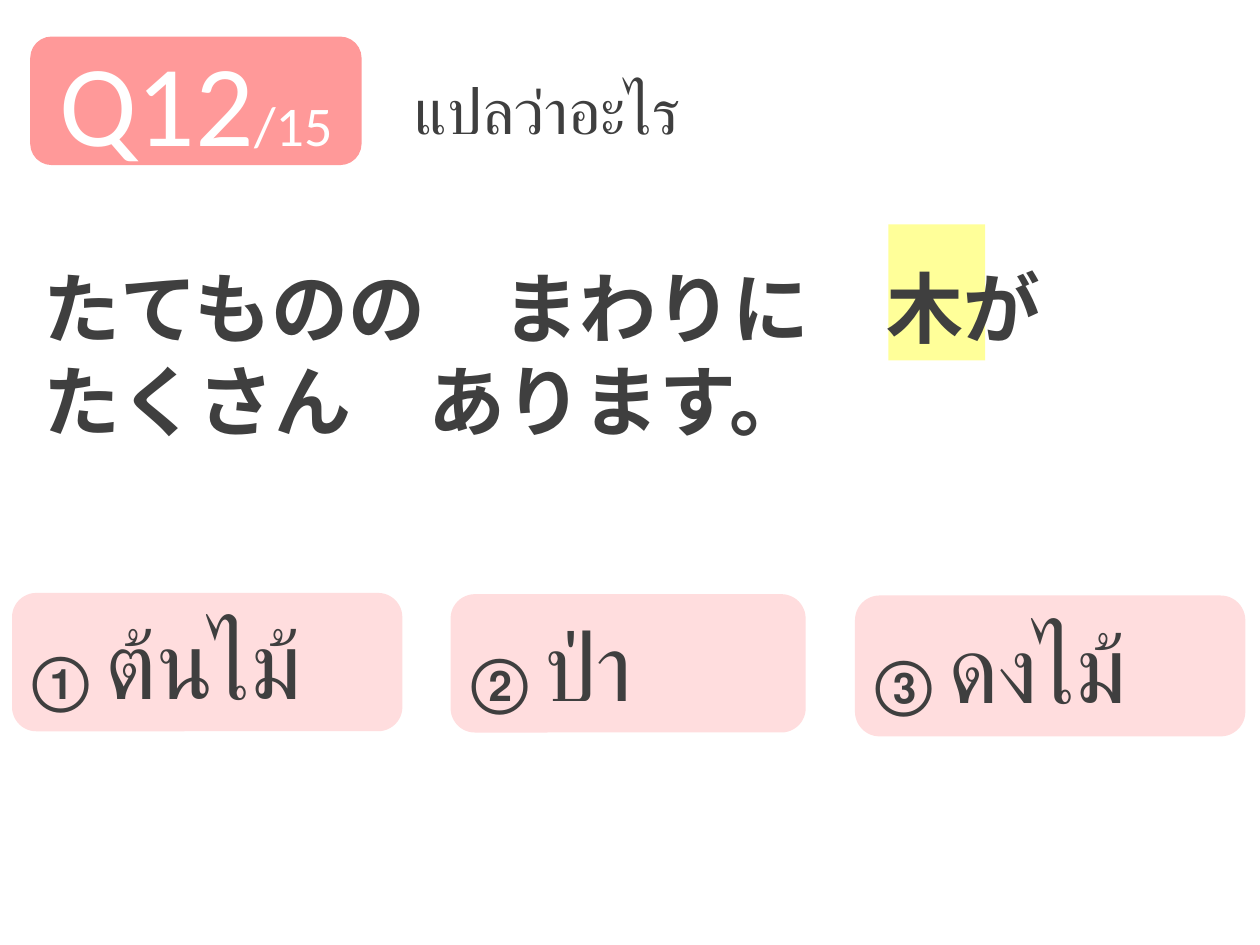
import pptx
import pptx.dml.color
import pptx.enum.shapes
import pptx.enum.text
import pptx.util

RGBColor = pptx.dml.color.RGBColor
SHAPE = pptx.enum.shapes.MSO_SHAPE
ALIGN = pptx.enum.text.PP_ALIGN
ANCHOR = pptx.enum.text.MSO_ANCHOR

INK = RGBColor(0x3F, 0x3F, 0x3F)
WHITE = RGBColor(0xFF, 0xFF, 0xFF)
CORAL = RGBColor(0xFF, 0x99, 0x99)
BLUSH = RGBColor(0xFF, 0xDD, 0xDE)
YELLOW = RGBColor(0xFF, 0xFF, 0x99)


class QuizSlide:
    """Places quiz elements on a slide grid of 100 columns by 75 rows."""

    columns, rows = 100, 75

    def __init__(self, presentation):
        self.column = presentation.slide_width / self.columns
        self.row = presentation.slide_height / self.rows
        self.slide = presentation.slides.add_slide(presentation.slide_layouts[5])

    def area(self, left, top, width, height):
        return (round(left * self.column), round(top * self.row),
                round(width * self.column), round(height * self.row))

    def fill_paragraph(self, paragraph, runs, color, font="Lato", align=ALIGN.LEFT):
        paragraph.alignment = align
        paragraph.font.name = font
        paragraph.font.color.rgb = color
        for text, size, bold in runs:
            run = paragraph.add_run()
            run.text = text
            run.font.size = pptx.util.Pt(size)
            run.font.bold = bold

    def box(self, kind, place, fill, outlined=False):
        shape = self.slide.shapes.add_shape(kind, *self.area(*place))
        shape.shadow.inherit = False
        shape.fill.solid()
        shape.fill.fore_color.rgb = fill
        if outlined:
            shape.line.color.rgb = fill
            shape.line.width = pptx.util.Pt(2)
        else:
            shape.line.fill.background()
        shape.text_frame.vertical_anchor = ANCHOR.MIDDLE
        return shape

    def title(self, text, place):
        shape = self.slide.shapes.title
        shape.left, shape.top, shape.width, shape.height = self.area(*place)
        frame = shape.text_frame
        frame.vertical_anchor = ANCHOR.TOP
        frame.auto_size = pptx.enum.text.MSO_AUTO_SIZE.NONE
        self.fill_paragraph(frame.paragraphs[0], [(text, 36, False)], INK)

    def highlight(self, place):
        self.box(SHAPE.RECTANGLE, place, YELLOW)

    def badge(self, number, total, place):
        shape = self.box(SHAPE.ROUNDED_RECTANGLE, place, CORAL)
        runs = [(f"Q{number}", 66, False), (f"/{total}", 32, False)]
        self.fill_paragraph(shape.text_frame.paragraphs[0], runs, WHITE,
                            "Calibri", ALIGN.CENTER)

    def answer(self, mark, text, place):
        shape = self.box(SHAPE.ROUNDED_RECTANGLE, place, BLUSH, outlined=True)
        runs = [(f"{mark} ", 32, True), (text, 54, False)]
        self.fill_paragraph(shape.text_frame.paragraphs[0], runs, INK)

    def sentence(self, lines, place):
        frame = self.slide.shapes.add_textbox(*self.area(*place)).text_frame
        frame.word_wrap = True
        for index, line in enumerate(lines):
            paragraph = frame.add_paragraph() if index else frame.paragraphs[0]
            self.fill_paragraph(paragraph, [(line, 44, True)], INK)


def main():
    presentation = pptx.Presentation()
    presentation.slide_width = pptx.util.Inches(10)
    presentation.slide_height = pptx.util.Inches(7.5)

    quiz = QuizSlide(presentation)
    quiz.title("แปลว่าอะไร", (31.9, 5.2, 68.5, 7.1))
    quiz.highlight((70.5, 17.8, 7.7, 10.8))
    quiz.badge(12, 15, (2.4, 2.9, 26.3, 10.2))
    answers = [
        ("①", "ต้นไม้", (1.1, 47.2, 30.7, 10.7)),
        ("②", "ป่า", (35.9, 47.3, 27.9, 10.7)),
        ("③", "ดงไม้", (68, 47.4, 30.7, 10.9)),
    ]
    for mark, text, place in answers:
        quiz.answer(mark, text, place)
    quiz.sentence(["たてものの　まわりに　木が", "たくさん　あります。"],
                  (2.5, 20.2, 94.7, 15.8))

    presentation.save("out.pptx")


if __name__ == "__main__":
    main()
